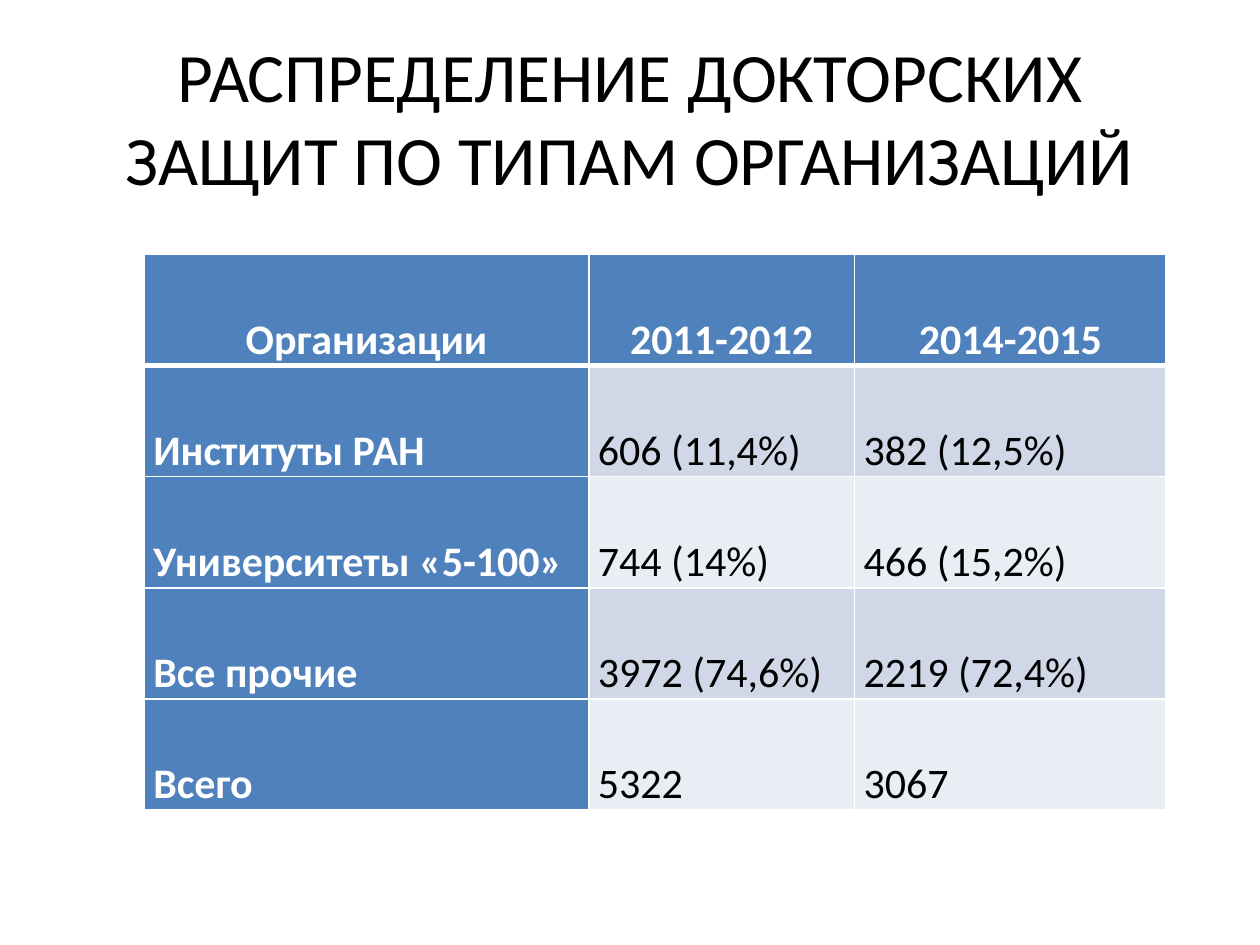
from lxml.etree import SubElement
from pptx import Presentation
from pptx.dml.color import RGBColor
from pptx.enum.text import MSO_ANCHOR, PP_ALIGN
from pptx.oxml import parse_xml
from pptx.oxml.ns import nsdecls, qn
from pptx.util import Cm, Pt

COLORS = {
    "text": "000000",
    "white": "FFFFFF",
    "header": "4F81BD",
    "odd_row": "D0D8E8",
    "even_row": "E9EDF4",
}
FONT = "Calibri"
ROWS = [
    ["Организации", "2011-2012", "2014-2015"],
    ["Институты РАН", "606 (11,4%)", "382 (12,5%)"],
    ["Университеты «5-100»", "744 (14%)", "466 (15,2%)"],
    ["Все прочие", "3972 (74,6%)", "2219 (72,4%)"],
    ["Всего", "5322", "3067"],
]
COLUMN_WIDTHS = [8.96, 5.36, 6.28]
ROW_HEIGHT = 2.24


def format_run(run, size, color, bold=False):
    run.font.name = FONT
    run.font.size = Pt(size)
    run.font.bold = bold
    run.font.color.rgb = RGBColor.from_string(COLORS[color])


def add_borders(cell, top, bottom):
    """Draw white cell borders; top and bottom are widths in points."""
    properties = cell._tc.get_or_add_tcPr()
    widths = {"lnL": 1, "lnR": 1, "lnT": top, "lnB": bottom}
    for index, (side, width) in enumerate(widths.items()):
        line = parse_xml(f'<a:{side} {nsdecls("a")} w="{Pt(width)}"/>')
        fill = SubElement(line, qn("a:solidFill"))
        SubElement(fill, qn("a:srgbClr"), val=COLORS["white"])
        properties.insert(index, line)


deck = Presentation()
deck.slide_width, deck.slide_height = Cm(25.4), Cm(19.05)
page = deck.slides.add_slide(deck.slide_layouts[5])

title = page.shapes.title
title.left, title.top, title.width, title.height = Cm(1.27), Cm(0.76), Cm(22.86), Cm(3.18)
title.text_frame.text = "РАСПРЕДЕЛЕНИЕ ДОКТОРСКИХ ЗАЩИТ ПО ТИПАМ ОРГАНИЗАЦИЙ"
title.text_frame.vertical_anchor = MSO_ANCHOR.MIDDLE
title_para = title.text_frame.paragraphs[0]
title_para.alignment = PP_ALIGN.CENTER
format_run(title_para.runs[0], 39.6, "text")

table = page.shapes.add_table(
    len(ROWS), len(COLUMN_WIDTHS), Cm(2.91), Cm(5.13),
    Cm(sum(COLUMN_WIDTHS)), Cm(ROW_HEIGHT * len(ROWS)),
).table
table.first_col = True
for column, width in zip(table.columns, COLUMN_WIDTHS):
    column.width = Cm(width)

for row_index, values in enumerate(ROWS):
    table.rows[row_index].height = Cm(ROW_HEIGHT)
    for column_index, value in enumerate(values):
        is_header = row_index == 0 or column_index == 0
        band = "odd_row" if row_index % 2 else "even_row"
        cell = table.cell(row_index, column_index)
        cell.fill.solid()
        cell.fill.fore_color.rgb = RGBColor.from_string(COLORS["header" if is_header else band])
        cell.vertical_anchor = MSO_ANCHOR.BOTTOM
        cell.margin_left = cell.margin_right = Cm(0.18)
        cell.margin_top = cell.margin_bottom = 0
        add_borders(cell, top=3 if row_index == 1 else 1, bottom=3 if row_index == 0 else 1)

        para = cell.text_frame.paragraphs[0]
        para.text = value
        para.alignment = PP_ALIGN.CENTER if row_index == 0 else PP_ALIGN.JUSTIFY
        para.line_spacing = 1.15
        format_run(para.runs[0], 24, "white" if is_header else "text", bold=is_header)

deck.save("out.pptx")
